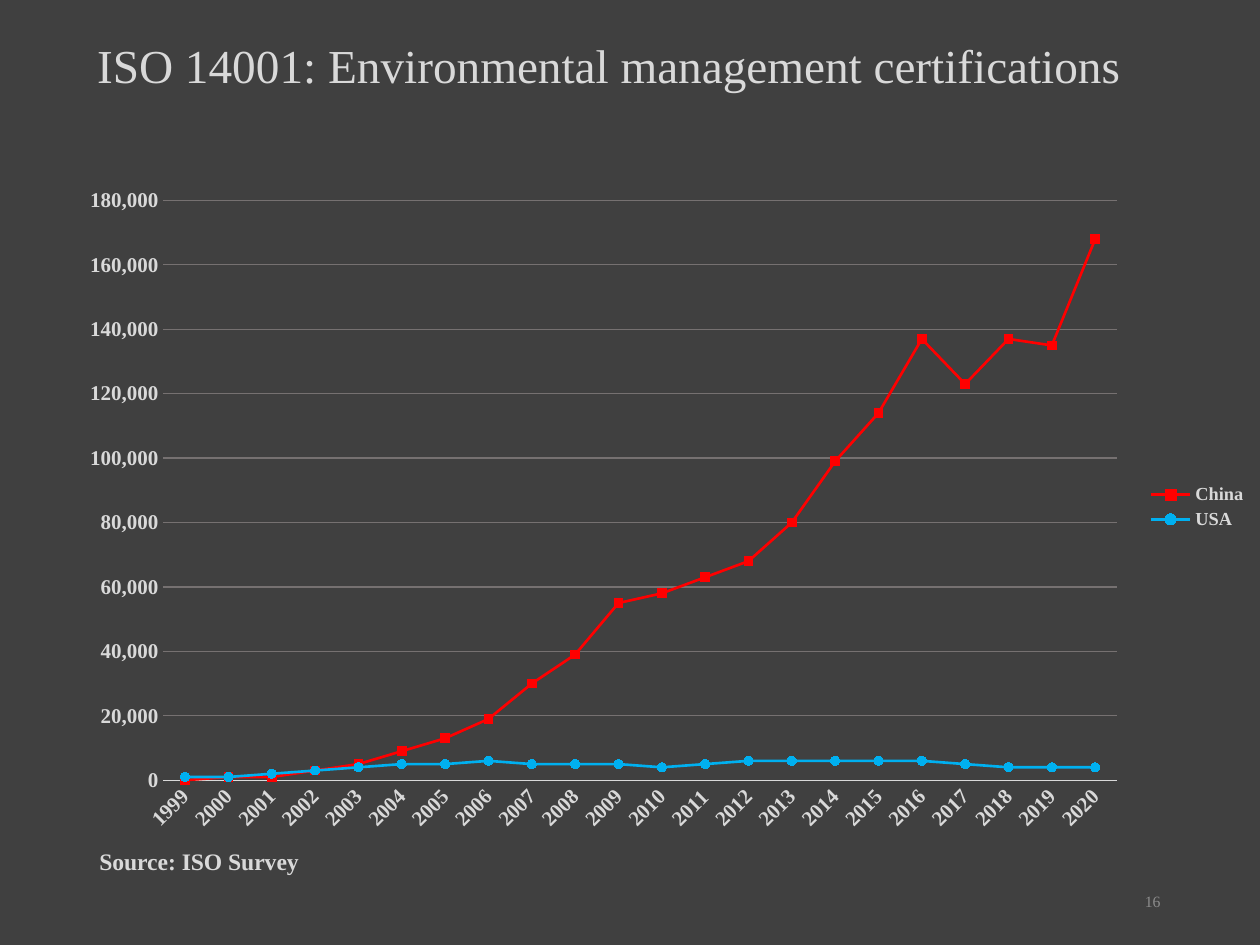
from lxml.etree import SubElement
from pptx import Presentation
from pptx.chart.data import CategoryChartData
from pptx.dml.color import RGBColor
from pptx.enum.chart import XL_CHART_TYPE as ChartType, XL_LEGEND_POSITION as LegendSide
from pptx.enum.chart import XL_MARKER_STYLE as Marker, XL_TICK_MARK as Tick
from pptx.enum.text import MSO_ANCHOR as Anchor, MSO_AUTO_SIZE as AutoSize, PP_ALIGN as Align
from pptx.oxml.ns import qn
from pptx.util import Inches, Pt

DARK, PALE, GRID, DIM = "404040", "D9D9D9", "767171", "8C8C8C"
RED, BLUE = "FF0000", "00B0F0"


def paint(color_format, color):
    color_format.rgb = RGBColor.from_string(color)


def style(font, size, color=PALE, bold=False):
    font.name = "Times New Roman"
    font.size = Pt(size)
    font.bold = bold
    paint(font.color, color)


deck = Presentation()
deck.slide_width, deck.slide_height = Inches(10), Inches(7.5)
col, row = deck.slide_width / 100, deck.slide_height / 100
slide = deck.slides.add_slide(deck.slide_layouts[5])
slide.background.fill.solid()
paint(slide.background.fill.fore_color, DARK)

heading = slide.shapes.title
source = slide.shapes.add_textbox(0, 0, 0, 0)
page_number = slide.shapes.add_textbox(0, 0, 0, 0)
for box, words, left, top, width, height, size, color, bold, align, anchor in [
    (heading, "ISO 14001: Environmental management certifications",
     6.7, 2.8, 86.2, 8.93, 27, PALE, False, Align.LEFT, Anchor.MIDDLE),
    (source, "Source: ISO Survey",
     6.9, 88.93, 50, 4.4, 13.5, PALE, True, Align.LEFT, Anchor.TOP),
    (page_number, "16",
     70.6, 92.67, 22.5, 5.33, 9, DIM, False, Align.RIGHT, Anchor.MIDDLE),
]:
    box.left, box.top = int(left * col), int(top * row)
    box.width, box.height = int(width * col), int(height * row)
    frame = box.text_frame
    frame.text = words
    frame.word_wrap = True
    frame.auto_size = AutoSize.NONE
    frame.vertical_anchor = anchor
    frame.paragraphs[0].alignment = align
    style(frame.paragraphs[0].runs[0].font, size, color, bold)
heading.text_frame.paragraphs[0].line_spacing = 0.9
source.text_frame.auto_size = AutoSize.SHAPE_TO_FIT_TEXT

thousands = {
    "China": [0, 1, 1, 3, 5, 9, 13, 19, 30, 39, 55, 58, 63, 68, 80, 99,
              114, 137, 123, 137, 135, 168],
    "USA": [1, 1, 2, 3, 4, 5, 5, 6, 5, 5, 5, 4, 5, 6, 6, 6, 6, 6, 5, 4, 4, 4],
}
certifications = CategoryChartData(number_format="#,##0")
certifications.categories = [str(year) for year in range(1999, 2021)]
for country, counts in thousands.items():
    certifications.add_series(country, [count * 1000 for count in counts])

chart = slide.shapes.add_chart(
    ChartType.LINE_MARKERS, int(5.4 * col), int(18.4 * row),
    int(94.6 * col), int(70.53 * row), certifications).chart
chart.has_title = False
style(chart.font, 10)
chart.has_legend = True
chart.legend.position = LegendSide.RIGHT
chart.legend.include_in_layout = False
style(chart.legend.font, 10.5, bold=True)

plot = chart.plots[0]
plot.vary_by_categories = False
for series, color, marker in zip(plot.series, (RED, BLUE), (Marker.SQUARE, Marker.CIRCLE)):
    series.smooth = False
    series.format.line.width = Pt(1.5)
    paint(series.format.line.color, color)
    series.marker.style = marker
    series.marker.size = 5
    series.marker.format.fill.solid()
    paint(series.marker.format.fill.fore_color, color)
    paint(series.marker.format.line.color, color)

years, counts_axis = chart.category_axis, chart.value_axis
for axis in (years, counts_axis):
    axis.major_tick_mark = axis.minor_tick_mark = Tick.NONE
    style(axis.tick_labels.font, 12, bold=True)
years.format.line.width = Pt(0.75)
paint(years.format.line.color, PALE)
years_body = years._element.find(qn("c:txPr")).find(qn("a:bodyPr"))
years_body.set("rot", str(-45 * 60000))
years_body.set("vert", "horz")

counts_axis.minimum_scale, counts_axis.maximum_scale = 0, 180000
counts_axis.major_unit = 20000
counts_axis.tick_labels.number_format = "#,##0"
counts_axis.tick_labels.number_format_is_linked = False
counts_axis.format.line.fill.background()
counts_axis.has_major_gridlines = True
counts_axis.major_gridlines.format.line.width = Pt(0.75)
paint(counts_axis.major_gridlines.format.line.color, GRID)

plot_area = chart._chartSpace.chart.plotArea
layout = plot_area.find(qn("c:layout"))
if layout is None:
    layout = SubElement(plot_area, qn("c:layout"))
    plot_area.insert(0, layout)
manual = SubElement(layout, qn("c:manualLayout"))
for tag, setting in [("layoutTarget", "inner"), ("xMode", "edge"), ("yMode", "edge"),
                     ("x", "0.08"), ("y", "0.04"), ("w", "0.8"), ("h", "0.87")]:
    SubElement(manual, qn(f"c:{tag}")).set("val", setting)
plot_look = SubElement(plot_area, qn("c:spPr"))
plot_fill = SubElement(plot_look, qn("a:solidFill"))
SubElement(plot_fill, qn("a:srgbClr")).set("val", DARK)

deck.save("out.pptx")
